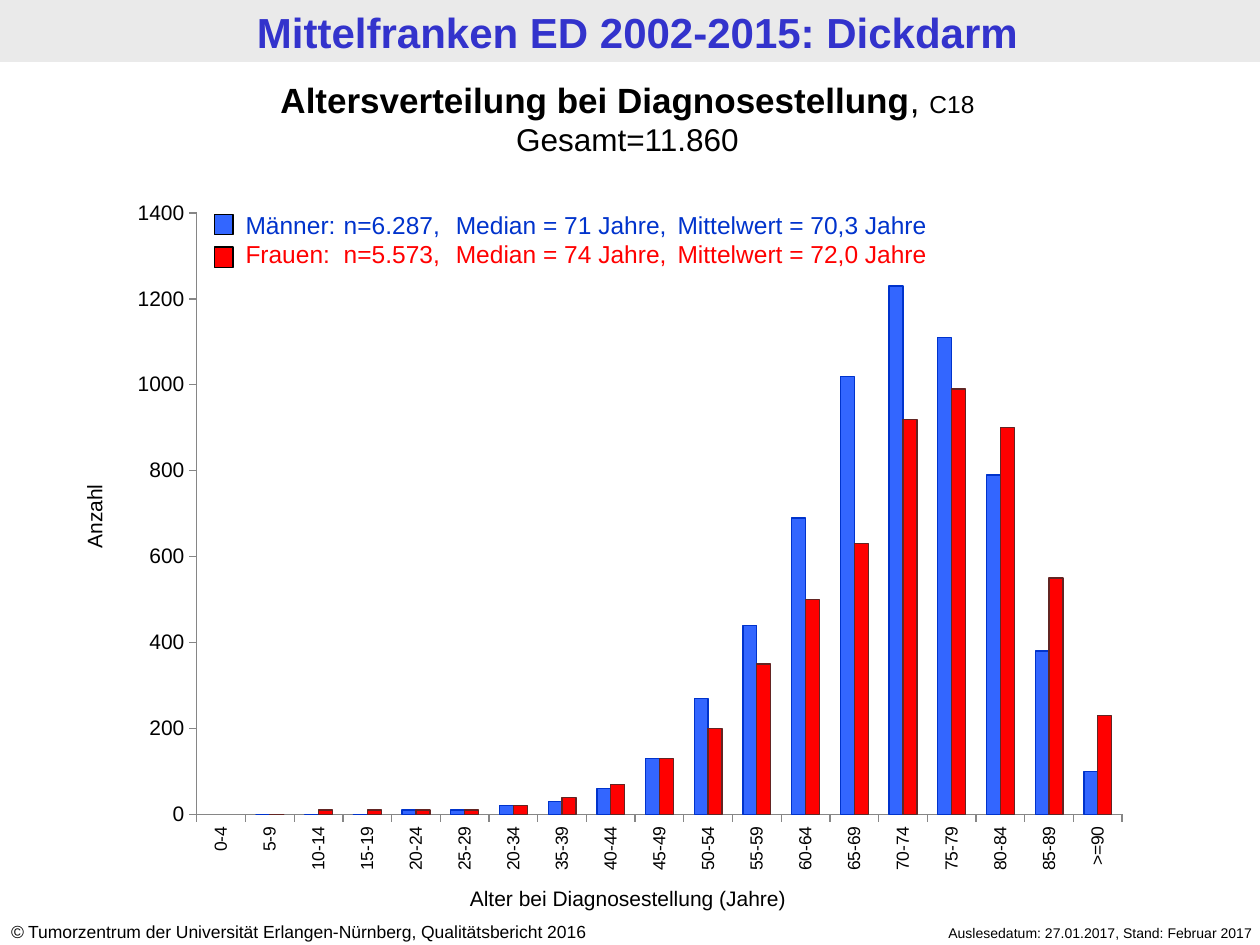
from lxml.etree import SubElement
from pptx import Presentation
from pptx.chart.data import CategoryChartData
from pptx.dml.color import RGBColor
from pptx.enum.chart import XL_CHART_TYPE, XL_TICK_MARK
from pptx.enum.shapes import MSO_SHAPE
from pptx.enum.text import MSO_ANCHOR, MSO_AUTO_SIZE, PP_ALIGN
from pptx.oxml import parse_xml
from pptx.oxml.ns import nsdecls, qn
from pptx.util import Cm, Pt

COLORS = {
    "band": "EAEAEA", "title": "3333CC", "text": "000000", "white": "FFFFFF",
    "men": "3366FF", "men_line": "0033CC", "women": "FF0000",
    "women_line": "632523", "axis": "868686",
}
AGES = ["0-4", "5-9", "10-14", "15-19", "20-24", "25-29", "20-34", "35-39",
        "40-44", "45-49", "50-54", "55-59", "60-64", "65-69", "70-74",
        "75-79", "80-84", "85-89", ">=90"]
COUNTS = {
    "Männer": [None, 0, 0, 0, 10, 10, 20, 30, 60, 130, 270, 440, 690, 1020,
               1230, 1110, 790, 380, 100],
    "Frauen": [None, 0, 10, 10, 10, 10, 20, 40, 70, 130, 200, 350, 500, 630,
               920, 990, 900, 550, 230],
}
TABS = [1.98, 2.24, 4.24, 8.71]
PLOT_AREA = {"x": 0.08, "y": 0.04, "w": 0.9, "h": 0.86}


def color(name):
    return RGBColor.from_string(COLORS[name])


class SlideBuilder:
    font_name = "Arial"

    def __init__(self, slide):
        self.slide = slide

    def style_font(self, font, ink="text", **values):
        for name, value in {"name": self.font_name, **values}.items():
            setattr(font, name, value)
        font.color.rgb = color(ink)

    def place(self, shape, box):
        for name, value in zip(("left", "top", "width", "height"), box):
            setattr(shape, name, Cm(value))

    def rectangle(self, box, fill, line=None):
        shape = self.slide.shapes.add_shape(MSO_SHAPE.RECTANGLE, *map(Cm, box))
        shape.shadow.inherit = False
        shape.fill.solid()
        shape.fill.fore_color.rgb = color(fill)
        if line:
            shape.line.color.rgb = color(line)
            shape.line.width = Pt(0.75)
        else:
            shape.line.fill.background()
        return shape

    def title(self, text, box):
        shape = self.slide.shapes.title
        self.place(shape, box)
        frame = shape.text_frame
        margins = {"margin_left": 0.23, "margin_right": 0.23,
                   "margin_top": 0.1, "margin_bottom": 0.1}
        for name, value in margins.items():
            setattr(frame, name, Cm(value))
        frame.vertical_anchor = MSO_ANCHOR.TOP
        frame.auto_size = MSO_AUTO_SIZE.NONE
        self.fill_paragraph(
            frame.paragraphs[0],
            [(text, {"size": Pt(24), "bold": True, "ink": "title"})], PP_ALIGN.CENTER)
        return shape

    def fill_paragraph(self, paragraph, runs, align, tabs=()):
        paragraph.alignment = align
        if tabs:
            tab_list = SubElement(paragraph._p.get_or_add_pPr(), qn("a:tabLst"))
            for position in tabs:
                SubElement(tab_list, qn("a:tab"), pos=str(Cm(position)), algn="l")
        for text, values in runs:
            run = paragraph.add_run()
            run.text = text
            self.style_font(run.font, **values)

    def text(self, box, paragraphs, align=PP_ALIGN.LEFT, tabs=(), rotation=0):
        shape = self.slide.shapes.add_textbox(*map(Cm, box))
        shape.rotation = rotation
        frame = shape.text_frame
        frame.word_wrap = True
        frame.auto_size = MSO_AUTO_SIZE.SHAPE_TO_FIT_TEXT
        for index, runs in enumerate(paragraphs):
            paragraph = frame.add_paragraph() if index else frame.paragraphs[0]
            self.fill_paragraph(paragraph, runs, align, tabs)

    def axis(self, axis, size):
        axis.has_major_gridlines = False
        axis.major_tick_mark = XL_TICK_MARK.OUTSIDE
        axis.minor_tick_mark = XL_TICK_MARK.NONE
        axis.format.line.color.rgb = color("axis")
        axis.format.line.width = Pt(0.75)
        self.style_font(axis.tick_labels.font, size=Pt(size))

    def column_chart(self, box, categories, counts, fills):
        data = CategoryChartData()
        data.categories = categories
        for name, values in counts.items():
            data.add_series(name, values)
        chart = self.slide.shapes.add_chart(
            XL_CHART_TYPE.COLUMN_CLUSTERED, *map(Cm, box), data).chart
        chart.has_legend = False
        chart.has_title = False
        self.style_font(chart.font, size=Pt(18), name="Calibri")
        plot = chart.plots[0]
        for name, value in {"gap_width": 150, "overlap": 0, "vary_by_categories": False}.items():
            setattr(plot, name, value)
        for series, (fill, line) in zip(plot.series, fills):
            series.invert_if_negative = False
            series.format.fill.solid()
            series.format.fill.fore_color.rgb = color(fill)
            series.format.line.color.rgb = color(line)
            series.format.line.width = Pt(0.75)
        self.axis(chart.category_axis, 10)
        self.axis(chart.value_axis, 12)
        for name, value in {"minimum_scale": 0, "maximum_scale": 1400, "major_unit": 200}.items():
            setattr(chart.value_axis, name, value)
        labels = chart.category_axis._element.find(qn("c:txPr"))
        labels.find(qn("a:bodyPr")).set("rot", "-5400000")
        self.fix_plot_area(chart)

    def fix_plot_area(self, chart):
        area = chart._chartSpace.chart.plotArea
        for old in area.findall(qn("c:layout")):
            area.remove(old)
        sizes = "".join(f'<c:{key} val="{value}"/>' for key, value in PLOT_AREA.items())
        area.insert(0, parse_xml(
            f'<c:layout {nsdecls("c")}><c:manualLayout><c:layoutTarget val="inner"/>'
            f'<c:xMode val="edge"/><c:yMode val="edge"/>{sizes}'
            '</c:manualLayout></c:layout>'))
        area.append(parse_xml(
            f'<c:spPr {nsdecls("c", "a")}><a:solidFill><a:srgbClr val="{COLORS["white"]}"/>'
            '</a:solidFill></c:spPr>'))


def main():
    presentation = Presentation()
    presentation.slide_width, presentation.slide_height = Cm(25.4), Cm(19.05)
    slide = presentation.slides.add_slide(presentation.slide_layouts[5])
    builder = SlideBuilder(slide)

    title = builder.title("Mittelfranken ED 2002-2015: Dickdarm", (0.15, 0.03, 25.4, 1.25))
    band = builder.rectangle((0, 0, 25.4, 1.25), "band")
    title.element.addprevious(band.element)

    builder.text((-0.03, 18.44, 13.31, 0.69), [[
        ("©", {"size": Pt(10), "italic": True}),
        (" Tumorzentrum der Universität Erlangen-Nürnberg, Qualitätsbericht 2016",
         {"size": Pt(10)})]])
    builder.text((16.89, 18.52, 8.61, 0.61), [[
        ("Auslesedatum: 27.01.2017, Stand: Februar 2017", {"size": Pt(8)})]], PP_ALIGN.RIGHT)

    builder.column_chart((2.31, 3.73, 20.73, 14.1), AGES, COUNTS,
                         [("men", "men_line"), ("women", "women_line")])

    builder.text((-0.1, 1.45, 25.5, 1.88), [
        [("Altersverteilung bei Diagnosestellung", {"size": Pt(20), "bold": True}),
         (", ", {"size": Pt(20)}), ("C18", {"size": Pt(14)})],
        [("Gesamt=11.860", {"size": Pt(18)})]], PP_ALIGN.CENTER)
    builder.text((4.7, 4.11, 17.4, 1.45), [
        [("Männer: \tn=6.287, \tMedian = 71 Jahre, \tMittelwert = 70,3 Jahre",
          {"size": Pt(14), "ink": "men_line"})],
        [("Frauen: \tn=5.573, \tMedian = 74 Jahre,\tMittelwert = 72,0 Jahre",
          {"size": Pt(14), "ink": "women"})]], tabs=TABS)
    for top, fill in ((4.32, "men"), (4.98, "women")):
        builder.rectangle((4.32, top, 0.38, 0.41), fill, "text")

    axis_titles = [
        ("Alter bei Diagnosestellung (Jahre)", (8.76, 17.73, 7.8, 0.76), 0),
        ("Anzahl", (-1.42, 10.03, 6.63, 0.76), 270),
    ]
    for text, box, rotation in axis_titles:
        builder.text(box, [[(text, {"size": Pt(12)})]], PP_ALIGN.CENTER, rotation=rotation)

    presentation.save("out.pptx")


if __name__ == "__main__":
    main()
